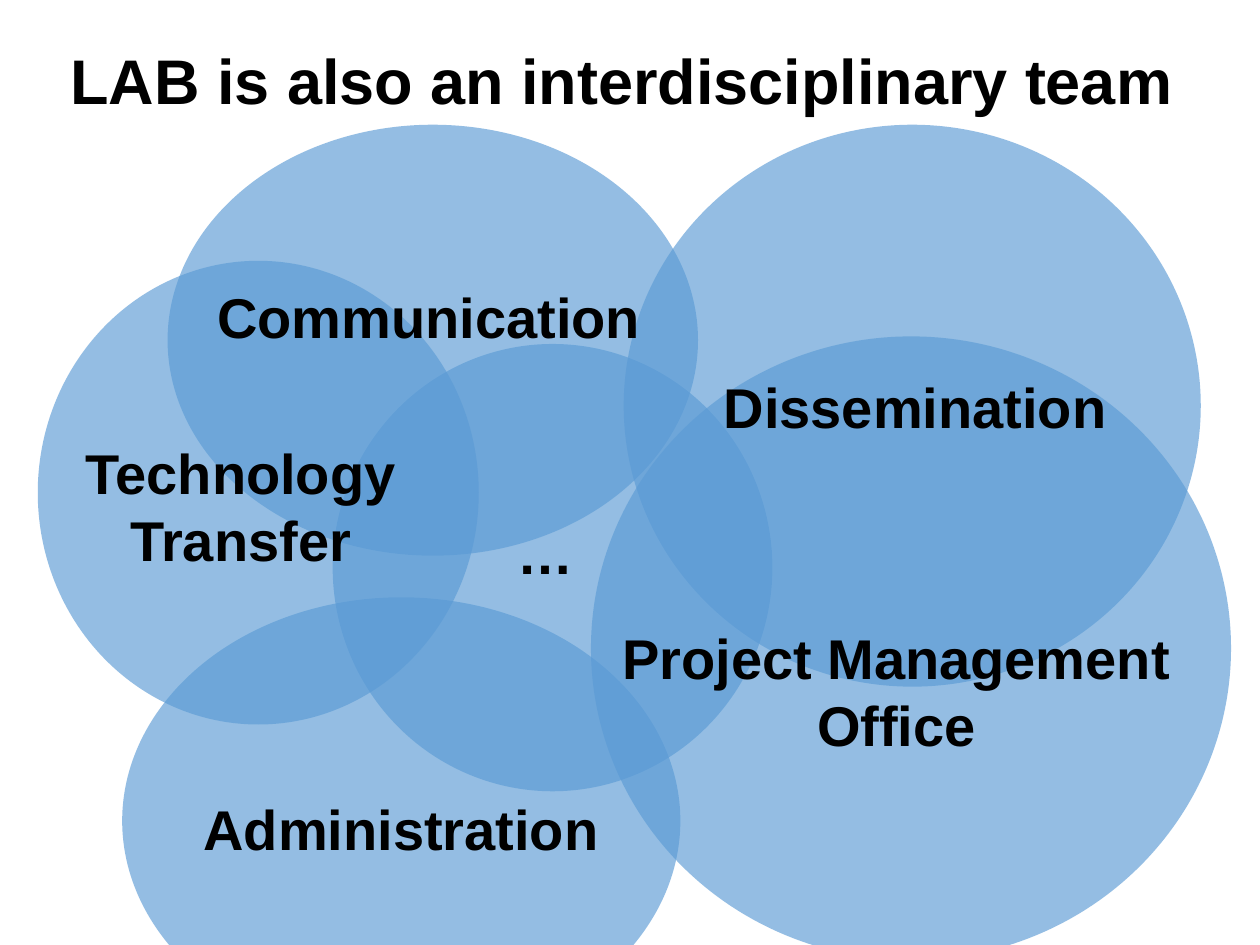
from dataclasses import dataclass

from lxml import etree
from pptx import Presentation
from pptx.dml.color import RGBColor
from pptx.enum.shapes import MSO_SHAPE
from pptx.enum.text import MSO_AUTO_SIZE, PP_ALIGN
from pptx.oxml.ns import qn
from pptx.util import Inches, Pt

ELLIPSE = MSO_SHAPE.OVAL
CENTER = PP_ALIGN.CENTER
GROW = MSO_AUTO_SIZE.SHAPE_TO_FIT_TEXT


@dataclass(frozen=True)
class Theme:
    circle: RGBColor = RGBColor(0x5B, 0x9B, 0xD5)
    circle_opacity: int = 65
    text: RGBColor = RGBColor(0, 0, 0)
    font: str = "Arial"
    title_size: int = 36
    label_size: int = 32


# Left, top, width, height in inches, from back to front
TEAM_CIRCLES = [
    (0.97, 4.74, 4.43, 3.55),  # Administration
    (2.64, 2.73, 3.49, 3.55),  # further teams
    (1.33, 0.99, 4.21, 3.42),  # Communication
    (0.30, 2.07, 3.50, 3.68),  # Technology Transfer
    (4.95, 0.99, 4.58, 4.46),  # Dissemination
    (4.69, 2.67, 5.08, 4.95),  # Project Management Office
]

TEAM_LABELS = [
    ("Communication", (0.97, 2.19, 4.87, 0.64)),
    ("Dissemination", (4.83, 2.91, 4.87, 0.64)),
    ("Technology Transfer", (0, 3.43, 3.82, 1.18)),
    ("Project Management Office", (4.68, 4.9, 4.87, 1.18)),
    ("Administration", (0.75, 6.26, 4.87, 0.64)),
    ("…", (2.67, 4.07, 3.32, 0.64)),
]


class SlideBuilder:
    def __init__(self, slide, theme):
        self.slide = slide
        self.theme = theme

    def circle(self, box):
        circle = self.slide.shapes.add_shape(ELLIPSE, *map(Inches, box))
        circle.shadow.inherit = False
        circle.line.fill.background()
        circle.fill.solid()
        circle.fill.fore_color.rgb = self.theme.circle
        # Transparency
        color = circle.fill._xPr.find(qn("a:solidFill"))[0]
        opacity = str(self.theme.circle_opacity * 1000)
        etree.SubElement(color, qn("a:alpha"), val=opacity)

    def label(self, text, box, size):
        frame = self.slide.shapes.add_textbox(*map(Inches, box)).text_frame
        frame.word_wrap = True
        frame.auto_size = GROW
        paragraph = frame.paragraphs[0]
        paragraph.alignment = CENTER
        run = paragraph.add_run()
        run.text = text
        font_format = {"name": self.theme.font, "size": Pt(size), "bold": True}
        for attribute, value in font_format.items():
            setattr(run.font, attribute, value)
        run.font.color.rgb = self.theme.text


def main():
    deck = Presentation()
    deck.slide_width, deck.slide_height = Inches(10), Inches(7.5)
    theme = Theme()
    builder = SlideBuilder(deck.slides.add_slide(deck.slide_layouts[6]), theme)

    # Overlapping team circles
    for box in TEAM_CIRCLES:
        builder.circle(box)

    # Title
    builder.label("LAB is also an interdisciplinary team",
                  (0.31, 0.28, 9.25, 0.71), theme.title_size)

    # Team names
    for team, box in TEAM_LABELS:
        builder.label(team, box, theme.label_size)

    deck.save("out.pptx")


if __name__ == "__main__":
    main()
